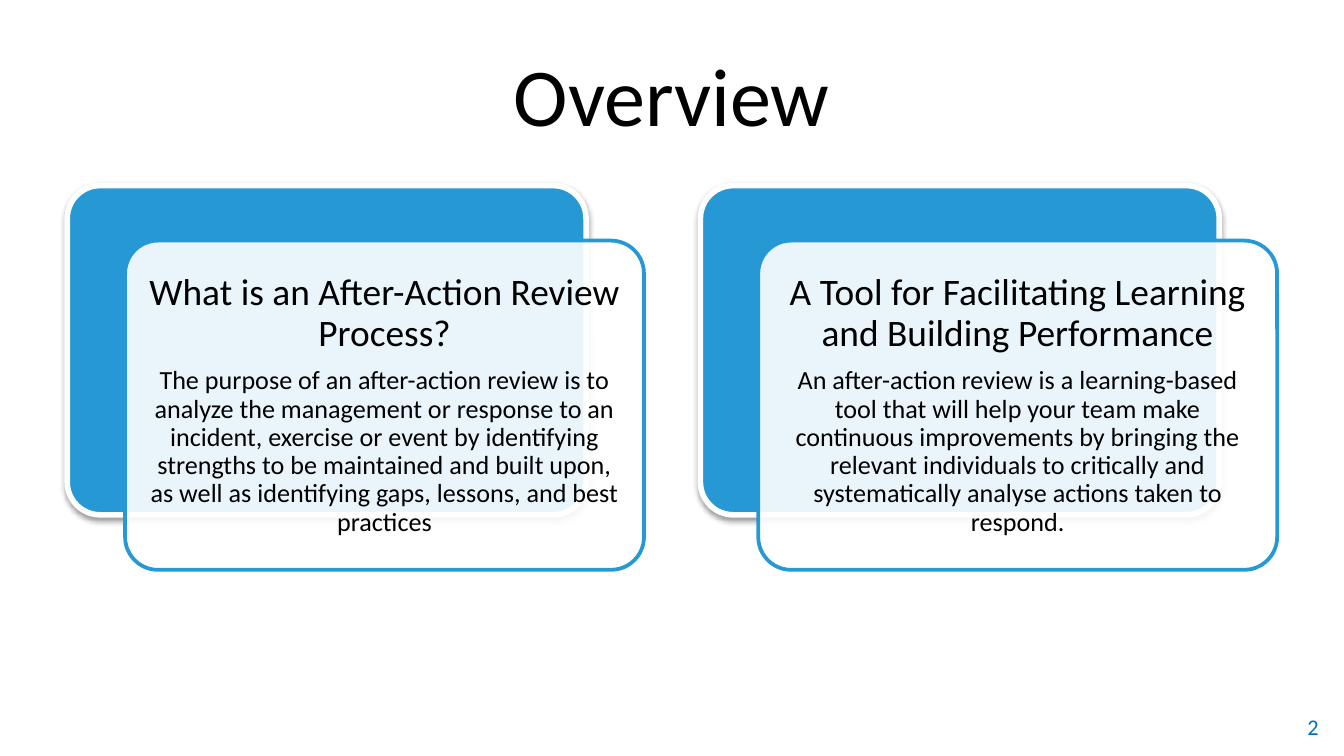
from lxml.etree import SubElement
from pptx import Presentation
from pptx.dml.color import RGBColor
from pptx.enum.shapes import MSO_SHAPE
from pptx.enum.text import MSO_ANCHOR, PP_ALIGN
from pptx.oxml.ns import qn
from pptx.util import Pt

# Content
TITLE = "Overview"
NUMBER = "2"
CARDS = [
    ("What is an After-Action Review Process?",
     "The purpose of an after-action review is to analyze the management or "
     "response to an incident, exercise or event by identifying strengths to "
     "be maintained and built upon, as well as identifying gaps, lessons, "
     "and best practices"),
    ("A Tool for Facilitating Learning and Building Performance",
     "An after-action review is a learning-based tool that will help your "
     "team make continuous improvements by bringing the relevant individuals "
     "to critically and systematically analyse actions taken to respond."),
]

# Style
FONT = "Calibri"
BLACK = RGBColor(0x00, 0x00, 0x00)
WHITE = RGBColor(0xFF, 0xFF, 0xFF)
BLUE = RGBColor(0x26, 0x99, 0xD5)
NAVY = RGBColor(0x00, 0x70, 0xC0)

# Layout, in points
LEFT, TOP = 36, 99.4
WIDE, HIGH = 278, 176.4
STEP = 339.2            # from one card to the next
SHIFT_X, SHIFT_Y = 31, 29.5  # front panel against back panel
EDGE = 5.1              # front panel to its text
INSET = 5.8


def add_text(slide, box, items, align, inset=None):
    """Add a text box; items hold text, size, colour and space after."""
    shape = slide.shapes.add_textbox(*map(Pt, box))
    frame = shape.text_frame
    frame.word_wrap = True
    frame.vertical_anchor = MSO_ANCHOR.MIDDLE
    if inset is not None:
        frame.margin_left = frame.margin_right = Pt(inset)
        frame.margin_top = frame.margin_bottom = Pt(inset)
    frame.text = "\n".join(item[0] for item in items)
    for para, (_, size, color, after) in zip(frame.paragraphs, items):
        para.alignment = align
        para.space_after = Pt(after)
        font = para.runs[0].font
        font.name, font.size = FONT, Pt(size)
        font.color.rgb = color
    return frame


def add_panel(slide, left, top, fill, line, width):
    panel = slide.shapes.add_shape(
        MSO_SHAPE.ROUNDED_RECTANGLE, Pt(left), Pt(top), Pt(WIDE), Pt(HIGH))
    panel.adjustments[0] = 0.1
    panel.fill.solid()
    panel.fill.fore_color.rgb = fill
    panel.line.color.rgb = line
    panel.line.width = Pt(width)
    panel.shadow.inherit = False
    return panel


def add_shadow(panel):
    effects = panel._element.spPr.find(qn("a:effectLst"))
    outer = SubElement(effects, qn("a:outerShdw"), blurRad=str(Pt(3.1)),
                       dist=str(Pt(1.6)), dir="5400000", rotWithShape="0")
    color = SubElement(outer, qn("a:srgbClr"), val="000000")
    SubElement(color, qn("a:alpha"), val="38000")


def set_alpha(panel, percent):
    color = panel._element.spPr.find(qn("a:solidFill"))[0]
    SubElement(color, qn("a:alpha"), val=str(percent * 1000))


def add_card(slide, left, head, body):
    back = add_panel(slide, left, TOP, BLUE, WHITE, 3)
    add_shadow(back)
    x, y = left + SHIFT_X, TOP + SHIFT_Y
    front = add_panel(slide, x, y, WHITE, BLUE, 2)
    set_alpha(front, 90)
    box = (x + EDGE, y + EDGE, WIDE - 2 * EDGE, HIGH - 2 * EDGE)
    items = [(head, 20, BLACK, 7), (body, 14, BLACK, 5)]
    frame = add_text(slide, box, items, PP_ALIGN.CENTER, INSET)
    for para in frame.paragraphs:
        para.line_spacing = 0.9


def main():
    deck = Presentation()
    deck.slide_width, deck.slide_height = Pt(720), Pt(405)
    slide = deck.slides.add_slide(deck.slide_layouts[6])

    # Title and slide number
    add_text(slide, (36, 16.5, 648, 67.5), [(TITLE, 44, BLACK, 0)],
             PP_ALIGN.CENTER)
    add_text(slide, (545.8, 378.7, 167.8, 21.6), [(NUMBER, 12, NAVY, 6)],
             PP_ALIGN.RIGHT)

    # Cards
    for i, (head, body) in enumerate(CARDS):
        add_card(slide, LEFT + i * STEP, head, body)

    deck.save("out.pptx")


if __name__ == "__main__":
    main()
